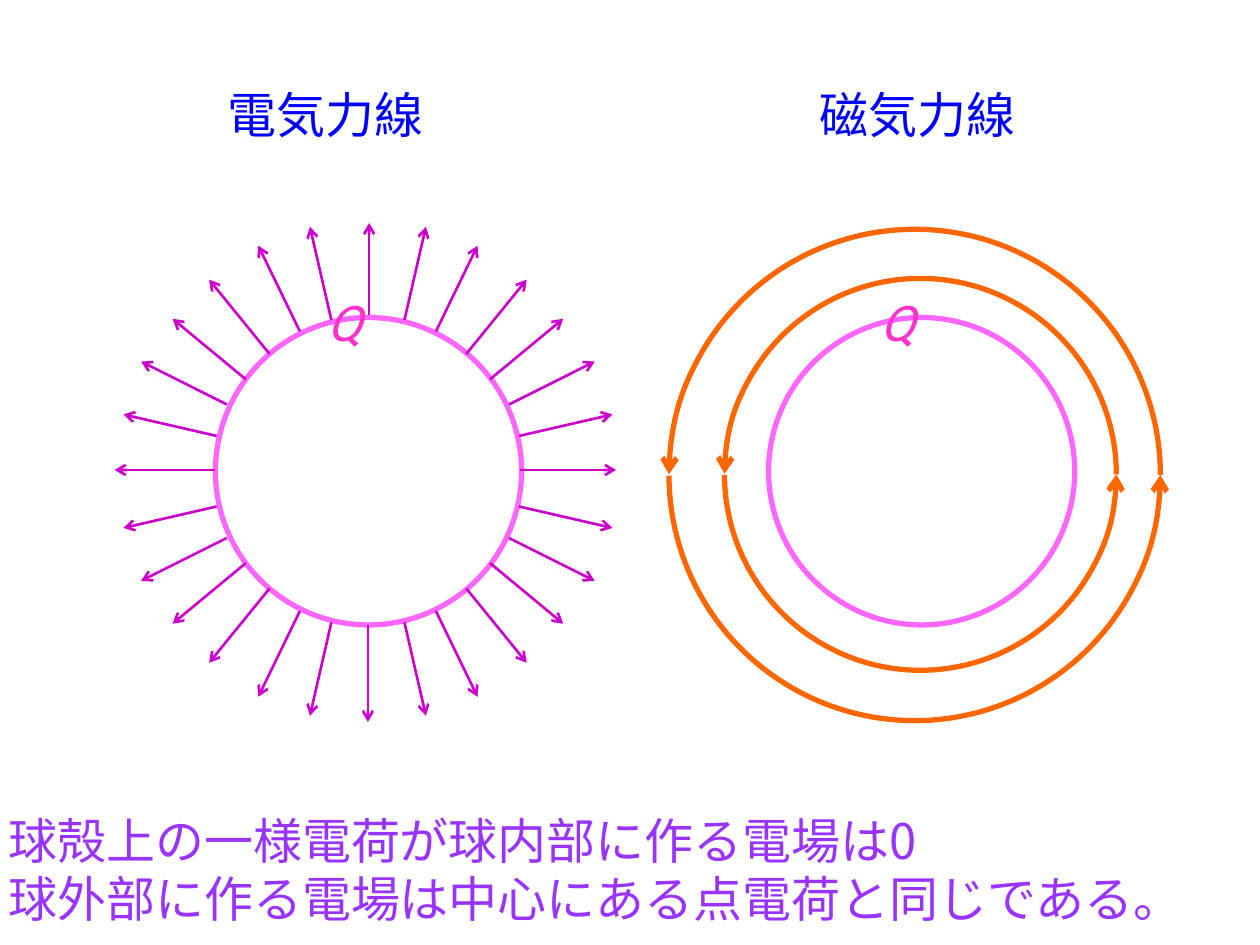
from lxml.etree import SubElement
from pptx import Presentation
from pptx.dml.color import RGBColor
from pptx.enum.shapes import MSO_CONNECTOR, MSO_SHAPE
from pptx.enum.text import MSO_AUTO_SIZE, PP_ALIGN
from pptx.oxml.ns import qn
from pptx.util import Pt

PX = 9144
GOTHIC = "Noto Sans CJK JP"

prs = Presentation()
prs.slide_width, prs.slide_height = 1000 * PX, 750 * PX
slide = prs.slides.add_slide(prs.slide_layouts[6])


def add_text(text, box, font, color, wrap=False, italic=None, align=None):
    label = slide.shapes.add_textbox(*(n * PX for n in box))
    frame = label.text_frame
    frame.word_wrap = wrap
    frame.auto_size = MSO_AUTO_SIZE.SHAPE_TO_FIT_TEXT
    frame.text = text
    for paragraph in frame.paragraphs:
        paragraph.alignment = align
        for run in paragraph.runs:
            run.font.name = font
            run.font.size = Pt(28)
            run.font.italic = italic
            run.font.color.rgb = RGBColor.from_string(color)
            SubElement(run.font._element, qn("a:ea")).set("typeface", GOTHIC)


def style_line(item, color, width, arrow=None):
    item.line.color.rgb = RGBColor.from_string(color)
    item.line.width = Pt(width)
    if arrow:
        SubElement(item.line._get_or_add_ln(), qn(f"a:{arrow}")).set("type", "arrow")


add_text("球殻上の一様電荷が球内部に作る電場は0\n球外部に作る電場は中心にある点電荷と同じである。",
         (-3, 638, 1000, 104), GOTHIC, "9933FF", wrap=True, align=PP_ALIGN.JUSTIFY)

for title, title_left, shell_left in [("電気力線", 171, 171), ("磁気力線", 641, 610)]:
    shell = slide.shapes.add_shape(MSO_SHAPE.OVAL, shell_left * PX, 252 * PX, 243 * PX, 244 * PX)
    shell.shadow.inherit = False
    shell.fill.background()
    style_line(shell, "FF66FF", 3)
    add_text("Q", (shell_left + 79, 227, 51, 57), "Roboto Slab", "FF33CC", italic=True)
    add_text(title, (title_left, 62, 177, 57), "Times New Roman", "0000FF")

center_x, center_y = 292, 374
rays = [(413, 373, 489, 373), (292, 496, 292, 573), (171, 373, 91, 373), (293, 250, 293, 177)]
quadrant = [(120, 28, 194, 45), (112, 53, 180, 87), (97, 73, 155, 121),
            (78, 93, 126, 152), (54, 111, 87, 179), (29, 120, 46, 194)]
for side_x in (1, -1):
    for side_y in (-1, 1):
        for x1, y1, x2, y2 in quadrant:
            rays.append((center_x + side_x * x1, center_y + side_y * y1,
                         center_x + side_x * x2, center_y + side_y * y2))

electric_field = slide.shapes.add_group_shape().shapes
for ends in rays:
    ray = electric_field.add_connector(MSO_CONNECTOR.STRAIGHT, *(n * PX for n in ends))
    style_line(ray, "CC00CC", 1.5, "tailEnd")
    SubElement(ray._element.spPr, qn("a:effectLst"))

for left, top, size in [(575, 221, 311), (531, 182, 390)]:
    magnetic_loop = slide.shapes.add_group_shape().shapes
    for arrow in ("headEnd", "tailEnd"):
        half = magnetic_loop.add_shape(MSO_SHAPE.ARC, left * PX, top * PX, size * PX, size * PX)
        half.adjustments[0] = 108.104
        half.adjustments[1] = 0
        half.shadow.inherit = False
        half.fill.background()
        style_line(half, "FF6600", 3, arrow)
        if arrow == "tailEnd":
            half._element.spPr.xfrm.set("flipV", "1")

prs.save("out.pptx")
